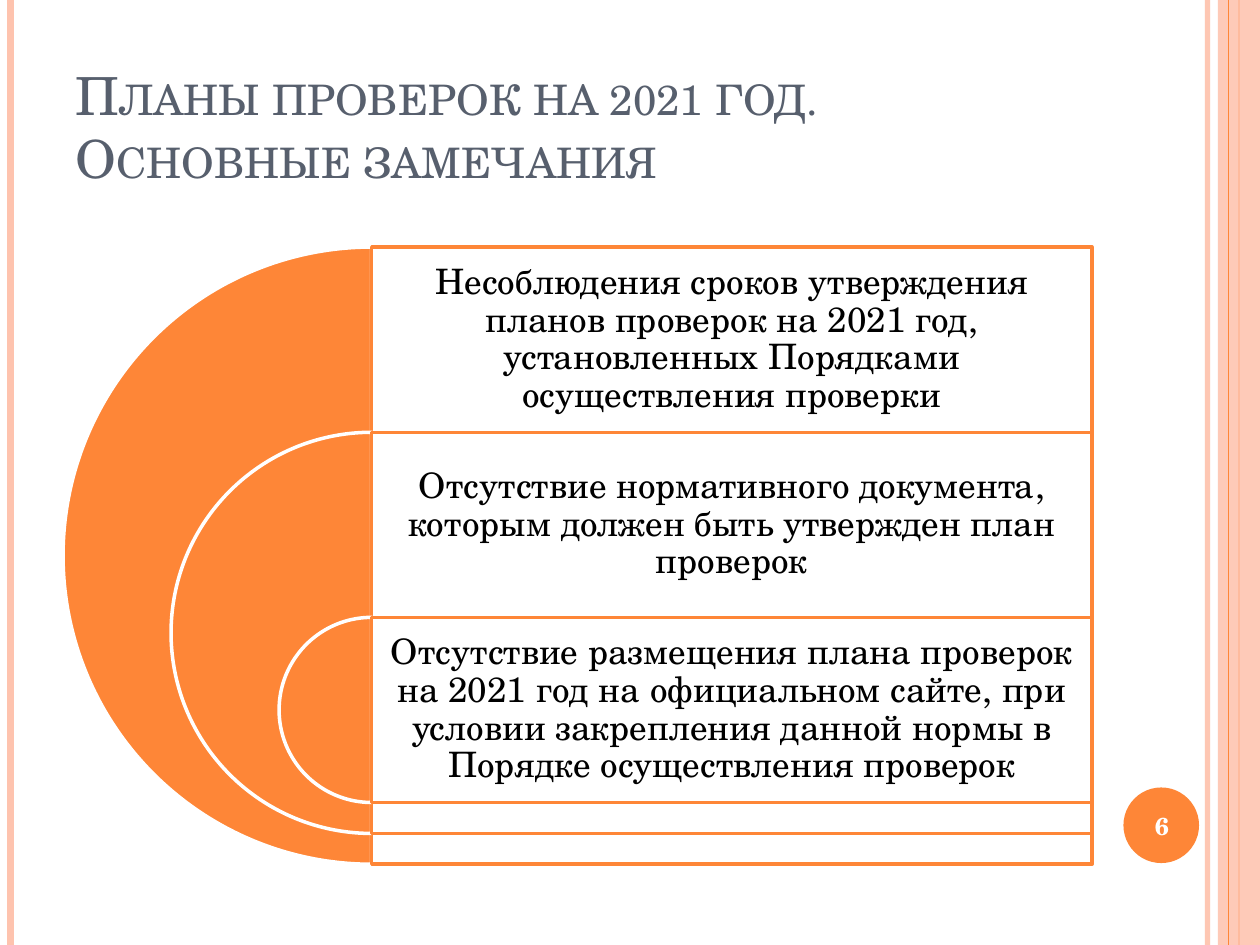
import pptx
import pptx.util
import pptx.dml.color
import pptx.enum.shapes
import pptx.enum.text
import pptx.oxml.ns
import lxml.etree

Pt = pptx.util.Pt
Kind = pptx.enum.shapes.MSO_SHAPE
Align = pptx.enum.text.PP_ALIGN
Anchor = pptx.enum.text.MSO_ANCHOR
qn = pptx.oxml.ns.qn

WIDE, HIGH = 720, 540


class Theme:
    face = "TeX Gyre Schola"
    slate, orange, peach = "575F6D", "FE8637", "FEC3AE"
    white, black = "FFFFFF", "000000"
    title, body, page = 30, 20, 14


NOTES = [
    "Несоблюдения сроков утверждения планов проверок на 2021 год, "
    "установленных Порядками осуществления проверки",
    "Отсутствие нормативного документа, которым должен быть утвержден "
    "план проверок",
    "Отсутствие размещения плана проверок на 2021 год на официальном сайте, "
    "при условии закрепления данной нормы в Порядке осуществления проверок",
]


def rgb(code):
    return pptx.dml.color.RGBColor.from_string(code)


def apply(item, values):
    for name, value in values.items():
        setattr(item, name, value)


def fade(item, percent):
    """Set the opacity of the first solid colour inside the shape."""
    color = next(item._element.spPr.iter(qn("a:srgbClr")))
    alpha = lxml.etree.SubElement(color, qn("a:alpha"))
    alpha.set("val", str(percent * 1000))


def write(shape, text, size, color, frame=None, para=None, font=None):
    """Fill a shape with one formatted paragraph."""
    body = shape.text_frame
    apply(body, {"word_wrap": True,
                 "auto_size": pptx.enum.text.MSO_AUTO_SIZE.NONE,
                 **(frame or {})})
    line = body.paragraphs[0]
    apply(line, para or {})
    run = line.add_run()
    run.text = text
    apply(run.font, {"name": Theme.face, "size": Pt(size), **(font or {})})
    run.font.color.rgb = rgb(color)
    return run


def add_text(slide, box, *words, **look):
    return write(slide.shapes.add_textbox(*map(Pt, box)), *words, **look)


def add_form(slide, kind, box, fill, edge=None, solid=100):
    form = slide.shapes.add_shape(kind, *map(Pt, box))
    form.shadow.inherit = False
    form.fill.solid()
    form.fill.fore_color.rgb = rgb(fill)
    if solid < 100:
        fade(form, solid)
    if edge:
        form.line.color.rgb = rgb(edge)
        form.line.width = Pt(2)
    else:
        form.line.fill.background()
    return form


def add_rule(slide, left, color, width, solid=100):
    """Draw a vertical line over the full slide height."""
    rule = slide.shapes.add_connector(
        pptx.enum.shapes.MSO_CONNECTOR.STRAIGHT,
        Pt(left), Pt(0), Pt(left), Pt(HIGH))
    rule.line.color.rgb = rgb(color)
    rule.line.width = Pt(width)
    if solid < 100:
        fade(rule, solid)
    lxml.etree.SubElement(rule._element.spPr, qn("a:effectLst"))


def add_frame(slide):
    """Draw the side stripes and the page disc."""
    add_rule(slide, 690, Theme.peach, 3, 93)
    add_rule(slide, 6, Theme.peach, 4.5)
    add_rule(slide, 708, Theme.orange, 1.5)
    add_form(slide, Kind.RECTANGLE, (696, 0, 24, HIGH), Theme.peach, solid=87)
    add_rule(slide, 702, Theme.orange, 0.75)
    add_form(slide, Kind.OVAL, (642, 450, 43.2, 43.2), Theme.orange)


def add_title(slide, text):
    title = slide.shapes.title
    apply(title, {"left": Pt(36), "top": Pt(21.6),
                  "width": Pt(588), "height": Pt(90)})
    run = write(title, text, Theme.title, Theme.slate,
                frame={"vertical_anchor": Anchor.BOTTOM},
                para={"alignment": Align.LEFT})
    run.font._element.set("cap", "small")


def add_arcs(slide, notes):
    """Nest half discs, each with its panel and note."""
    top, mid, wide = 141.2, 212.4, 411.6
    step, rise = 105.8, 17.65
    full = len(notes) * step + (len(notes) - 1) * rise
    look = {
        "frame": {"vertical_anchor": Anchor.MIDDLE,
                  **{"margin_" + side: Pt(6)
                     for side in ("left", "top", "right", "bottom")}},
        "para": {"alignment": Align.CENTER, "line_spacing": 0.9},
    }
    for rank, note in enumerate(notes):
        y = top + rank * step
        size = full - rank * (step + rise)
        arc = add_form(slide, Kind.PIE, (mid - size / 2, y, size, size),
                       Theme.orange, Theme.white)
        arc.adjustments[0], arc.adjustments[1] = 54, 162
        add_form(slide, Kind.RECTANGLE, (mid, y, wide, size),
                 Theme.white, Theme.orange, 90)
        add_text(slide, (mid, y, wide, step), note,
                 Theme.body, Theme.black, **look)


def main():
    deck = pptx.Presentation()
    apply(deck, {"slide_width": Pt(WIDE), "slide_height": Pt(HIGH)})
    slide = deck.slides.add_slide(deck.slide_layouts[5])

    add_frame(slide)
    add_title(slide, "Планы проверок на 2021 год. Основные замечания")
    add_arcs(slide, NOTES)

    # Page number
    add_text(slide, (640, 451.4, 48, 41), "6", Theme.page, Theme.white,
             frame={"vertical_anchor": Anchor.MIDDLE},
             para={"alignment": Align.CENTER}, font={"bold": True})
    deck.save("out.pptx")


if __name__ == "__main__":
    main()
